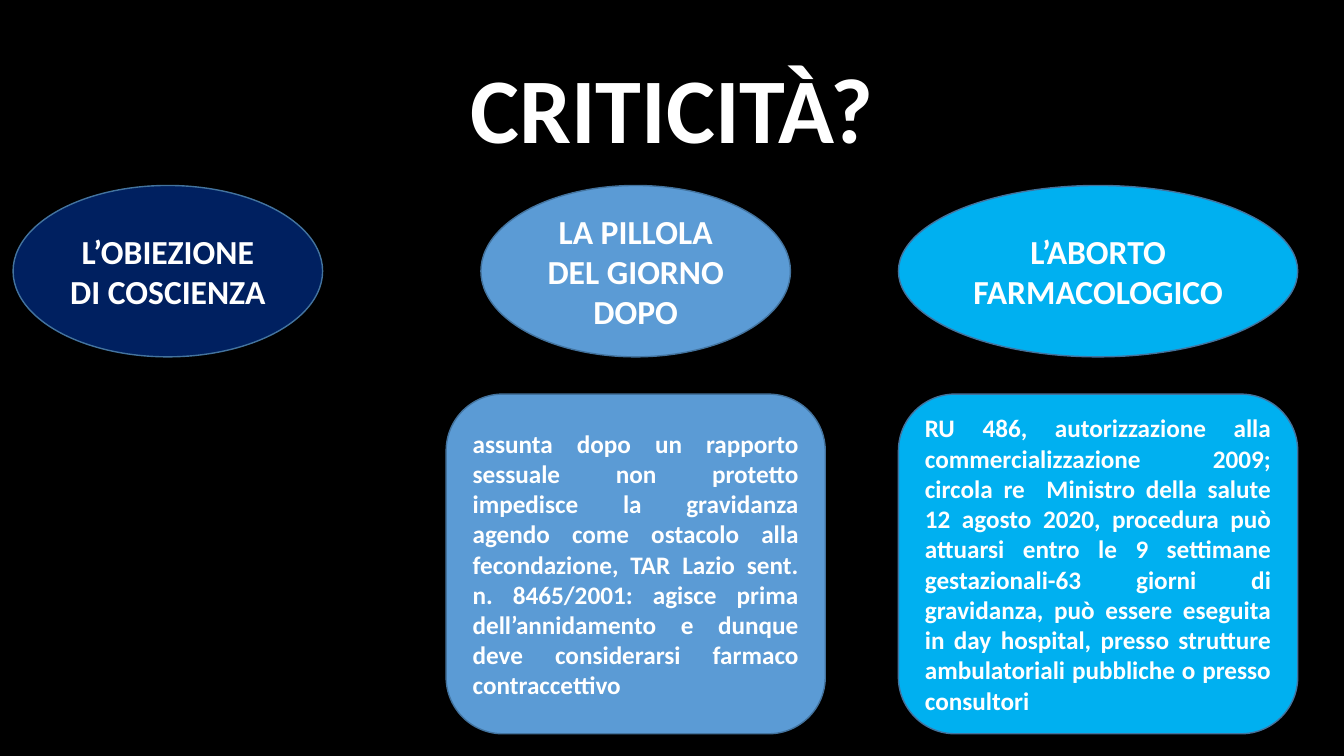
from dataclasses import dataclass

from pptx import Presentation
from pptx.dml.color import RGBColor as RGB
from pptx.enum.shapes import MSO_SHAPE as SHAPE
from pptx.enum.text import MSO_ANCHOR as ANCHOR, PP_ALIGN as ALIGN
from pptx.util import Inches, Pt


@dataclass(frozen=True)
class Theme:
    font: str = "Calibri"
    background: str = "000000"
    text: str = "FFFFFF"
    outline: str = "43739E"
    navy: str = "002060"
    blue: str = "5B9BD5"
    sky: str = "00B0F0"
    title_size: int = 66
    topic_size: int = 24
    detail_size: int = 18


class Deck:
    """Places elements by centre, top, width and height in percent of the slide."""

    def __init__(self, theme):
        self.theme = theme
        self.prs = Presentation()
        self.prs.slide_width, self.prs.slide_height = Inches(13.33), Inches(7.5)
        self.s = self.prs.slides.add_slide(self.prs.slide_layouts[6])
        fill = self.s.background.fill
        fill.solid()
        fill.fore_color.rgb = RGB.from_string(theme.background)

    def box(self, centre, top, width, height):
        w, h = self.prs.slide_width / 100, self.prs.slide_height / 100
        return [round(v) for v in ((centre - width / 2) * w, top * h, width * w, height * h)]

    def set_text(self, sp, text, size, align):
        tf = sp.text_frame
        tf.word_wrap = True
        tf.vertical_anchor = ANCHOR.MIDDLE
        p = tf.paragraphs[0]
        p.text = text
        p.alignment = align
        p.font.name, p.font.size, p.font.bold = self.theme.font, Pt(size), True
        p.font.color.rgb = RGB.from_string(self.theme.text)
        return p

    def title(self, text, *place):
        sp = self.s.shapes.add_textbox(*self.box(*place))
        self.set_text(sp, text, self.theme.title_size, ALIGN.CENTER).line_spacing = 0.9

    def shape(self, kind, color, text, size, align, *place):
        sp = self.s.shapes.add_shape(kind, *self.box(*place))
        sp.shadow.inherit = False
        sp.fill.solid()
        sp.fill.fore_color.rgb = RGB.from_string(color)
        sp.line.color.rgb = RGB.from_string(self.theme.outline)
        sp.line.width = Pt(1)
        self.set_text(sp, text, size, align)

    def topic(self, text, color, centre, width):
        self.shape(SHAPE.OVAL, color, text, self.theme.topic_size, ALIGN.CENTER,
                   centre, 24.53, width, 22.67)

    def detail(self, text, color, centre, width):
        self.shape(SHAPE.ROUNDED_RECTANGLE, color, text, self.theme.detail_size, ALIGN.JUSTIFY,
                   centre, 52.13, width, 44.93)


def main():
    theme = Theme()
    deck = Deck(theme)

    # Title
    deck.title("CRITICITÀ?", 50, 5.33, 86.27, 19.33)

    # Column centres
    left, middle, right = 12.49, 47.3, 81.7

    # Topics
    deck.topic("L’OBIEZIONE DI COSCIENZA", theme.navy, left, 23.03)
    deck.topic("LA PILLOLA DEL GIORNO DOPO", theme.blue, middle, 23.03)
    deck.topic("L’ABORTO FARMACOLOGICO", theme.sky, right, 29.71)

    # Details below the topics
    deck.detail(
        "assunta dopo un rapporto sessuale non protetto impedisce la gravidanza agendo "
        "come ostacolo alla fecondazione, TAR Lazio sent. n. 8465/2001: agisce prima "
        "dell’annidamento e dunque deve considerarsi farmaco contraccettivo",
        theme.blue, middle, 28.21)
    deck.detail(
        "RU 486, autorizzazione alla commercializzazione 2009; circola re  Ministro della "
        "salute 12 agosto 2020, procedura può attuarsi entro le 9 settimane gestazionali-63 "
        "giorni di gravidanza, può essere eseguita in day hospital, presso strutture "
        "ambulatoriali pubbliche o presso consultori",
        theme.sky, right, 29.71)

    deck.prs.save("out.pptx")


if __name__ == "__main__":
    main()
